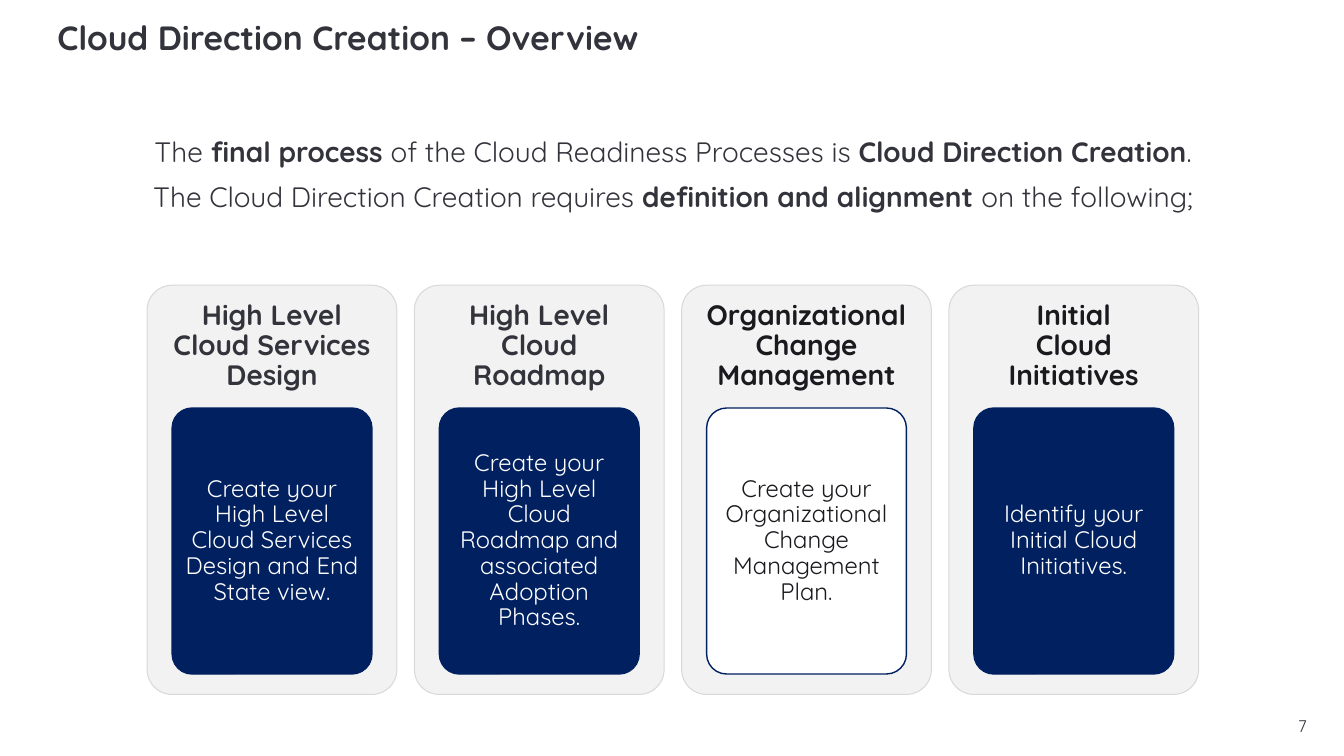
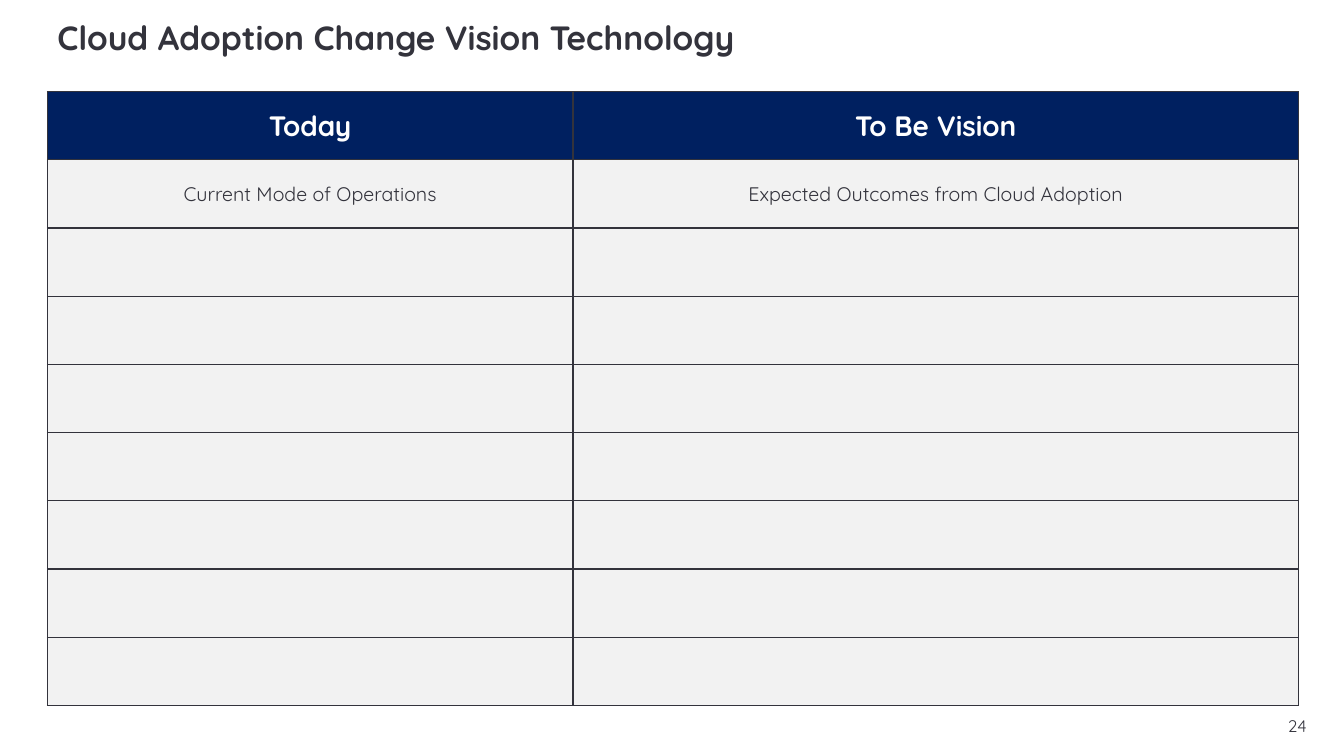
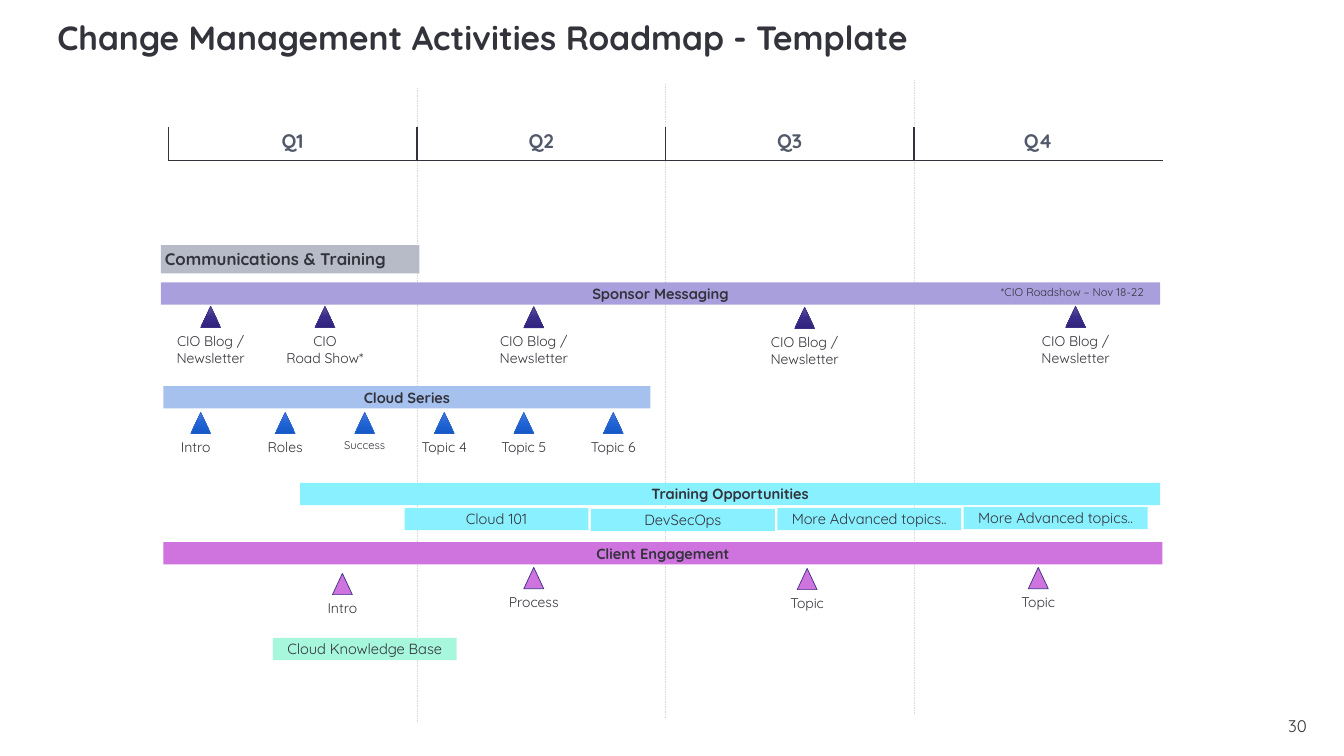
from copy import deepcopy
from dataclasses import dataclass

from lxml.etree import SubElement as Sub
from pptx import Presentation
from pptx.dml.color import RGBColor
from pptx.enum.dml import MSO_LINE as Dash
from pptx.enum.shapes import MSO_CONNECTOR as Link, MSO_SHAPE as Kind
from pptx.enum.text import MSO_ANCHOR as Anchor, PP_ALIGN as Align
from pptx.oxml.ns import qn
from pptx.util import Inches, Pt

# Shared look
FONT = "Quicksand"
INK, DARK, SLATE = "33333C", "19191E", "52596A"
NAVY, WHITE, PALE, RULE = "002060", "FFFFFF", "F2F2F2", "D9D9D9"
GREY, LILAC, SKY, CYAN = "B6BBC7", "A89FDC", "A6C1EE", "89F0FF"
PINK, MINT = "CF73DE", "A7F7DC"
PURPLE, BLUE = ("5C5595", "3A2D8A", "31247F"), ("5178D7", "2064D5", "1557C5")
EDGE, RIM = "3D3186", "2866CD"


@dataclass
class Box:
    """An area in inches, split into columns and rows."""
    x: float
    y: float
    w: float
    h: float
    cols: float = 1
    rows: float = 1

    def area(self, col, row, wide, high, cols=1, rows=1):
        dx, dy = self.w / self.cols, self.h / self.rows
        return Box(self.x + col * dx, self.y + row * dy,
                   wide * dx, high * dy, cols, rows)

    def emu(self):
        return [Inches(v) for v in (self.x, self.y, self.w, self.h)]


PAGE = Box(0, 0, 13.33, 7.5, 100, 100)


def tint(code):
    return RGBColor.from_string(code)


# Text: each paragraph is a list of (words, bold) runs
def write(frame, paras, size, color=INK, align=Align.CENTER, lead=None, before=None):
    for i, runs in enumerate(paras):
        para = frame.add_paragraph() if i else frame.paragraphs[0]
        para.alignment = align
        if lead:
            para.line_spacing = lead
        if before is not None:
            para.space_before = Pt(before)
        for words, bold in runs:
            for j, line in enumerate(words.split("\n")):
                if j:
                    para.add_line_break()
                run = para.add_run()
                run.text = line
                font = run.font
                font.name, font.size, font.bold = FONT, Pt(size), bold
                font.color.rgb = tint(color)


def setup(frame, anchor, wrap=True, side=0.1, edge=0.05):
    frame.word_wrap, frame.vertical_anchor = wrap, anchor
    frame.margin_left = frame.margin_right = Inches(side)
    frame.margin_top = frame.margin_bottom = Inches(edge)


def label(slide, box, paras, size, anchor=Anchor.TOP, wrap=True, **style):
    frame = slide.shapes.add_textbox(*box.emu()).text_frame
    setup(frame, anchor, wrap)
    write(frame, paras, size, **style)


def block(slide, box, kind, fill, line=None, width=1):
    shape = slide.shapes.add_shape(kind, *box.emu())
    shape.shadow.inherit = False
    if isinstance(fill, tuple):
        shade(shape, fill)
    else:
        shape.fill.solid()
        shape.fill.fore_color.rgb = tint(fill)
    if line:
        shape.line.color.rgb = tint(line)
        shape.line.width = Pt(width)
    else:
        shape.line.fill.background()
    return shape


# Top-to-bottom gradient with three stops
def shade(shape, tones):
    fill = shape.fill
    fill.gradient()
    fill.gradient_angle = 270
    stops = shape._element.spPr.find(".//" + qn("a:gsLst"))
    stops.insert(1, deepcopy(stops[0]))
    for stop, pos, tone in zip(fill.gradient_stops, (0, 0.5, 1), tones):
        stop.position = pos
        stop.color.rgb = tint(tone)


# Table cells: the sides named are drawn, the others are left clear
def border(cell, sides):
    props = cell._tc.get_or_add_tcPr()
    for i, side in enumerate("LRTB"):
        line = Sub(props, qn("a:ln" + side), w=str(Pt(1)))
        if side in sides:
            Sub(Sub(line, qn("a:solidFill")), qn("a:srgbClr"), val=INK)
        else:
            Sub(line, qn("a:noFill"))
        props.insert(i, line)


def grid(slide, box, rows, shares):
    table = slide.shapes.add_table(rows, len(shares), *box.emu()).table
    table.first_row = table.horz_banding = False
    for col, share in zip(table.columns, shares):
        col.width = Inches(box.w * share)
    for row in table.rows:
        row.height = Inches(box.h / rows)
    return table


# Title and page number
def start(deck, title, number):
    slide = deck.slides.add_slide(deck.slide_layouts[6])
    label(slide, PAGE.area(3.53, 2.13, 93.1, 6.8), [[(title, True)]], 24,
          align=Align.LEFT, lead=0.9)
    label(slide, PAGE.area(92.72, 93.33, 5.25, 5.33), [[(str(number), False)]], 12,
          Anchor.MIDDLE, align=Align.RIGHT)
    return slide


# Overview: a heading over an inner panel
def card(slide, box, head, body, ink, fill, tone):
    back = block(slide, box, Kind.ROUNDED_RECTANGLE, PALE, RULE, 0.75)
    panel = block(slide, box.area(0.1, 0.3, 0.8, 0.65),
                  Kind.ROUNDED_RECTANGLE, fill, NAVY)
    for shape in (back, panel):
        shape.adjustments[0] = 0.1
    label(slide, box.area(0, 0, 1, 0.3), [[(head, True)]], 20,
          Anchor.MIDDLE, color=ink, lead=0.9)
    setup(panel.text_frame, Anchor.MIDDLE, side=0.05, edge=0.04)
    write(panel.text_frame, [[(body, False)]], 17, tone, lead=0.9)


def overview(deck):
    slide = start(deck, "Cloud Direction Creation – Overview", 7)
    intro = [
        [("The", False), (" final process ", True),
         ("of the Cloud Readiness Processes is ", False),
         ("Cloud Direction Creation", True), (".", False)],
        [("The Cloud Direction Creation requires ", False),
         ("definition and alignment ", True), ("on the following;", False)],
    ]
    label(slide, PAGE.area(3.53, 12.27, 93.1, 22), intro, 20,
          Anchor.MIDDLE, lead=0.9, before=10)
    cards = [
        ("High Level\nCloud Services Design",
         "Create your High Level Cloud Services Design and End State view.",
         INK, NAVY, WHITE),
        ("High Level\nCloud\nRoadmap",
         "Create your High Level Cloud Roadmap and associated Adoption Phases.",
         INK, NAVY, WHITE),
        ("Organizational Change Management",
         "Create your Organizational Change Management Plan.",
         DARK, WHITE, DARK),
        ("Initial\nCloud\nInitiatives", "Identify your Initial Cloud Initiatives.",
         DARK, NAVY, WHITE),
    ]
    gap = 0.07
    count = len(cards)
    band = PAGE.area(10.95, 37.73, 78.24, 54.13, count + (count - 1) * gap)
    for i, texts in enumerate(cards):
        card(slide, band.area(i * (1 + gap), 0, 1, 1), *texts)


# Vision: two-column table
def vision(deck):
    slide = start(deck, "Cloud Adoption Change Vision Technology", 24)
    heads = [("Today", "To Be Vision"),
             ("Current Mode of Operations", "Expected Outcomes from Cloud Adoption")]
    looks = [(20, WHITE, True), (14, INK, False)]
    count = 9
    table = grid(slide, PAGE.area(3.53, 12.13, 93.1, 81.2), count, (0.42, 0.58))
    for r in range(count):
        for c in range(2):
            cell = table.cell(r, c)
            cell.vertical_anchor = Anchor.MIDDLE
            cell.fill.solid()
            cell.fill.fore_color.rgb = tint(PALE if r else NAVY)
            border(cell, "LRTB")
            if r < len(heads):
                size, tone, bold = looks[r]
                write(cell.text_frame, [[(heads[r][c], bold)]], size, tone)


# Roadmap: quarter heads and dashed dividers
def quarters(slide, plan):
    for i in range(3):
        box = plan.area(i + 1, -1.18 - 0.12 * i, 0, 19.09)
        x, y, _, high = box.emu()
        line = slide.shapes.add_connector(Link.STRAIGHT, x, y, x, y + high)
        line.line.color.rgb = tint(RULE)
        line.line.width = Pt(0.25)
        line.line.dash_style = Dash.DASH
        Sub(line._element.spPr, qn("a:effectLst"))
    table = grid(slide, plan.area(0, 0, 4, 1), 1, [0.25] * 4)
    for i in range(4):
        cell = table.cell(0, i)
        cell.margin_left = cell.margin_right = Inches(0.02)
        cell.margin_top = cell.margin_bottom = Inches(0.02)
        cell.fill.background()
        border(cell, "LRB" if i < 3 else "LB")
        write(cell.text_frame, [[(f"Q{i + 1}", True)]], 14, SLATE)


def bar(slide, box, words, fill, bold=True, size=10.5, align=Align.CENTER):
    shape = block(slide, box, Kind.RECTANGLE, fill)
    setup(shape.text_frame, Anchor.MIDDLE, side=0.04, edge=0)
    write(shape.text_frame, [[(words, bold)]], size, align=align)


# Triangle with its label below, centred on a column
def mark(slide, plan, col, row, words, fill, line, size=10, shift=0):
    block(slide, plan.area(col - 0.04, row, 0.08, 0.64),
          Kind.ISOSCELES_TRIANGLE, fill, line, 0.5)
    label(slide, plan.area(col - 0.21 + shift, row + 0.64, 0.42, 0.82),
          [[(words, False)]], size, wrap=False)


def roadmap(deck):
    slide = start(deck, "Change Management Activities Roadmap - Template", 30)
    plan = PAGE.area(12.53, 16.8, 73.97, 70.4, 4, 16)
    quarters(slide, plan)
    bar(slide, plan.area(-0.03, 3.55, 1.04, 0.85), "Communications & Training",
        GREY, size=12, align=Align.LEFT)

    # Lanes
    thick = 0.67
    lanes = [
        (-0.03, 4.67, 4.02, "Sponsor Messaging", LILAC),
        (-0.02, 7.79, 1.96, "Cloud Series", SKY),
        (0.53, 10.7, 3.46, "Training Opportunities", CYAN),
        (-0.02, 12.48, 4.02, "Client Engagement", PINK),
    ]
    for col, row, wide, words, fill in lanes:
        bar(slide, plan.area(col, row, wide, thick), words, fill)
    label(slide, plan.area(3.31, 4.61, 0.7, 0.73),
          [[("*CIO Roadshow – Nov 18-22", False)]], 8, wrap=False, align=Align.LEFT)

    # Courses
    courses = [("Cloud 101", 11.45), ("DevSecOps", 11.48),
               ("More Advanced topics..", 11.45), ("More Advanced topics..", 11.42)]
    for i, (words, row) in enumerate(courses):
        bar(slide, plan.area(0.95 + 0.75 * i, row, 0.74, thick), words, CYAN, False)
    bar(slide, plan.area(0.42, 15.36, 0.74, thick), "Cloud Knowledge Base", MINT, False)

    # Milestones
    blog = "CIO Blog /\nNewsletter"
    for col, row, words in [(0.17, 5.39, blog), (0.63, 5.39, "CIO\nRoad Show*"),
                            (1.47, 5.4, blog), (2.56, 5.42, blog), (3.65, 5.39, blog)]:
        mark(slide, plan, col, row, words, PURPLE, EDGE)
    for col, words, size, shift in [
            (0.13, "Intro", 10, -0.02), (0.47, "Roles", 10, 0),
            (0.79, "Success", 8, 0), (1.11, "Topic 4", 10, 0),
            (1.43, "Topic 5", 10, 0), (1.79, "Topic 6", 10, 0)]:
        mark(slide, plan, col, 8.58, words, BLUE, RIM, size, shift)
    for col, row, words in [(0.7, 13.42, "Intro"), (1.47, 13.24, "Process"),
                            (2.57, 13.27, "Topic"), (3.5, 13.24, "Topic")]:
        mark(slide, plan, col, row, words, PINK, EDGE)


def main():
    deck = Presentation()
    deck.slide_width, deck.slide_height = Inches(PAGE.w), Inches(PAGE.h)
    overview(deck)
    vision(deck)
    roadmap(deck)
    deck.save("out.pptx")


if __name__ == "__main__":
    main()
